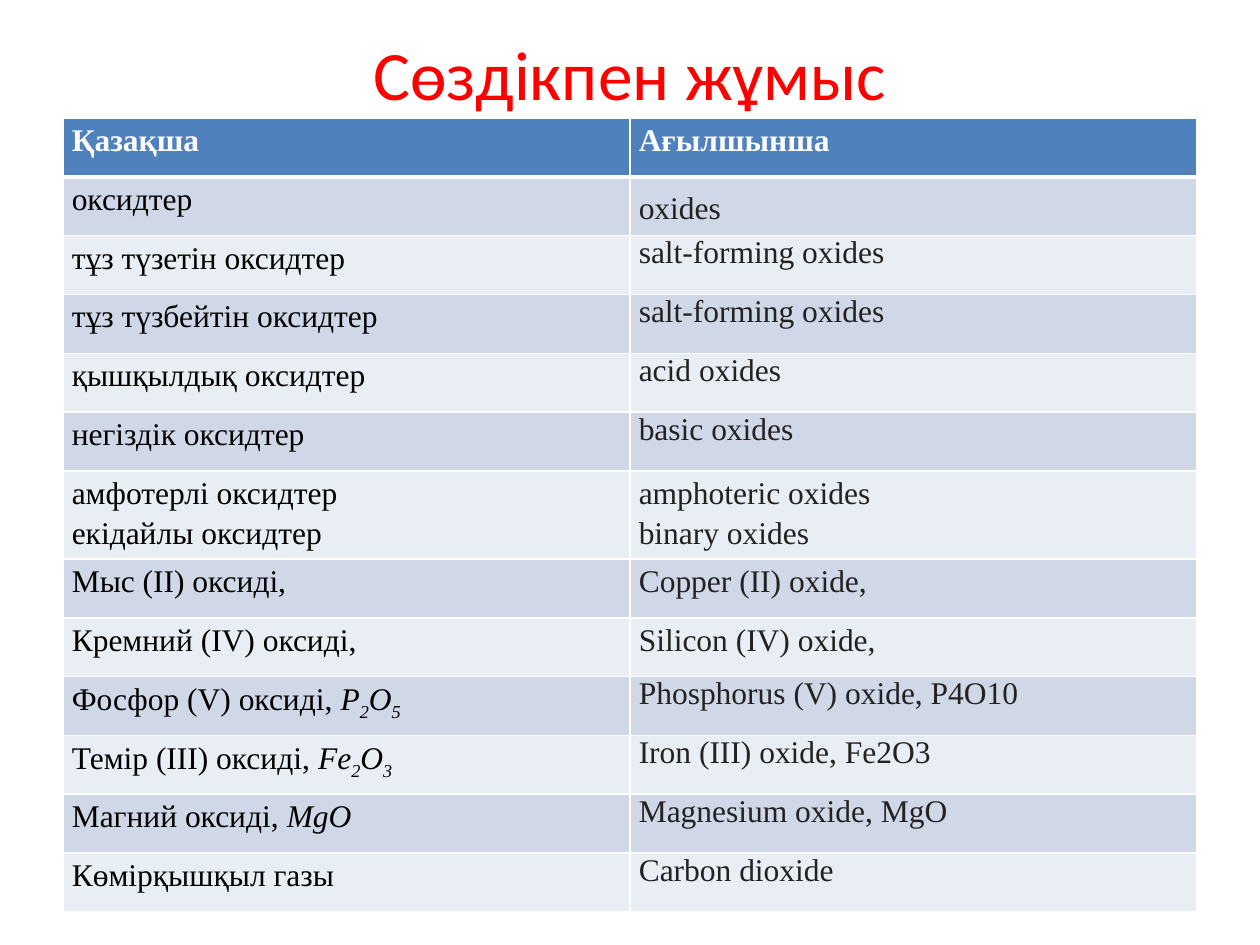
import dataclasses
import itertools
import typing

import lxml.etree
import pptx
import pptx.dml.color
import pptx.enum.text
import pptx.oxml.ns
import pptx.table
import pptx.text.text
import pptx.util


@dataclasses.dataclass(frozen=True)
class Theme:
    title_font: str = "Calibri"
    body_font: str = "Times New Roman"
    title_size: float = 39.6
    body_size: float = 18
    title: str = "FF0000"
    header: str = "4F81BD"
    bands: tuple[str, str] = ("D0D8E8", "E9EDF4")
    white: str = "FFFFFF"
    kazakh: str = "000000"
    english: str = "222222"
    rule: float = 1
    header_rule: float = 3


THEME = Theme()
LOOSE = 1.15
EXACT = pptx.util.Pt(28.1)
Spacing = typing.Union[float, pptx.util.Length, None]


@dataclasses.dataclass(frozen=True)
class Entry:
    kazakh: str
    english: str
    formula: str = ""
    english_spacing: Spacing = None


HEADER = Entry("Қазақша", "Ағылшынша", english_spacing=LOOSE)
ENTRIES = [
    Entry("оксидтер", "oxides", english_spacing=EXACT),
    Entry("тұз түзетін оксидтер", "salt-forming oxides"),
    Entry("тұз түзбейтін оксидтер", "salt-forming oxides"),
    Entry("қышқылдық оксидтер", "acid oxides"),
    Entry("негіздік оксидтер", "basic oxides"),
    Entry("амфотерлі оксидтер\nекідайлы оксидтер",
          "amphoteric oxides \vbinary oxides", english_spacing=LOOSE),
    Entry("Мыс (II) оксиді,", "Copper (II) oxide,", english_spacing=LOOSE),
    Entry("Кремний (IV) оксиді,", "Silicon (IV) oxide,", english_spacing=LOOSE),
    Entry("Фосфор (V) оксиді, ", "Phosphorus (V) oxide, P4O10", "P2O5"),
    Entry("Темір (III) оксиді, ", "Iron (III) oxide, Fe2O3", "Fe2O3"),
    Entry("Магний оксиді, ", "Magnesium oxide, MgO", "MgO"),
    Entry("Көмірқышқыл газы", "Carbon dioxide"),
]


def rgb(color: str) -> pptx.dml.color.RGBColor:
    return pptx.dml.color.RGBColor.from_string(color)


def style(paragraph: pptx.text.text._Paragraph, name: str, size: float,
          color: str, bold: bool = False) -> None:
    font = paragraph.font
    font.name, font.size, font.bold = name, pptx.util.Pt(size), bold
    font.color.rgb = rgb(color)


def add_formula(paragraph: pptx.text.text._Paragraph, formula: str) -> None:
    """Append an italic formula with its digits as subscripts."""
    for is_index, letters in itertools.groupby(formula, str.isdigit):
        part = paragraph.add_run()
        part.text = "".join(letters)
        part.font.italic = True
        if is_index:
            part._r.get_or_add_rPr().set("baseline", "-25000")


def add_borders(cell: pptx.table._Cell, bottom: float, top: float) -> None:
    widths = {"lnL": THEME.rule, "lnR": THEME.rule, "lnT": top, "lnB": bottom}
    qn = pptx.oxml.ns.qn
    for side, width in widths.items():
        line = lxml.etree.SubElement(cell._tc.get_or_add_tcPr(), qn(f"a:{side}"),
                                     w=str(pptx.util.Pt(width)))
        paint = lxml.etree.SubElement(line, qn("a:solidFill"))
        lxml.etree.SubElement(paint, qn("a:srgbClr"), val=THEME.white)


def fill_cell(cell: pptx.table._Cell, text: str, spacing: Spacing, color: str,
              fill: str, bold: bool, formula: str = "") -> None:
    cell.margin_left = cell.margin_right = pptx.util.Inches(0.07)
    cell.margin_top = cell.margin_bottom = 0
    cell.fill.solid()
    cell.fill.fore_color.rgb = rgb(fill)
    cell.text_frame.text = text
    for paragraph in cell.text_frame.paragraphs:
        style(paragraph, THEME.body_font, THEME.body_size, color, bold)
        paragraph.line_spacing = spacing
    add_formula(cell.text_frame.paragraphs[-1], formula)


def draw_entry(table: pptx.table.Table, row: int, entry: Entry) -> None:
    is_header = row == 0
    fill = THEME.header if is_header else THEME.bands[(row - 1) % 2]
    colors = (THEME.white,) * 2 if is_header else (THEME.kazakh, THEME.english)
    kazakh, english = table.cell(row, 0), table.cell(row, 1)
    for cell in (kazakh, english):
        add_borders(cell, bottom=THEME.header_rule if is_header else THEME.rule,
                    top=THEME.header_rule if row == 1 else THEME.rule)
    fill_cell(kazakh, entry.kazakh, LOOSE, colors[0], fill, is_header, entry.formula)
    fill_cell(english, entry.english, entry.english_spacing, colors[1], fill, is_header)


def main() -> None:
    deck = pptx.Presentation()
    deck.slide_width, deck.slide_height = pptx.util.Inches(10), pptx.util.Inches(7.5)
    slide = deck.slides.add_slide(deck.slide_layouts[6])
    width, height = deck.slide_width, deck.slide_height
    left, content_width = int(width * 0.05), int(width * 0.9)

    # Heading
    heading = slide.shapes.add_textbox(left, int(height * 0.04), content_width,
                                       int(height * 0.075)).text_frame
    heading.word_wrap = True
    heading.vertical_anchor = pptx.enum.text.MSO_ANCHOR.MIDDLE
    heading.text = "Сөздікпен жұмыс"
    heading.paragraphs[0].alignment = pptx.enum.text.PP_ALIGN.CENTER
    style(heading.paragraphs[0], THEME.title_font, THEME.title_size, THEME.title)

    # Glossary: equal rows, with a taller one for the two-line entry
    rows = [HEADER, *ENTRIES]
    table_height, tall_row = int(height * 0.84), pptx.util.Inches(0.7)
    plain_row = (table_height - tall_row) // (len(rows) - 1)
    glossary = slide.shapes.add_table(len(rows), 2, left, int(height * 0.125),
                                      content_width, table_height).table
    for row, entry in enumerate(rows):
        glossary.rows[row].height = tall_row if "\n" in entry.kazakh else plain_row
        draw_entry(glossary, row, entry)

    deck.save("out.pptx")


if __name__ == "__main__":
    main()
